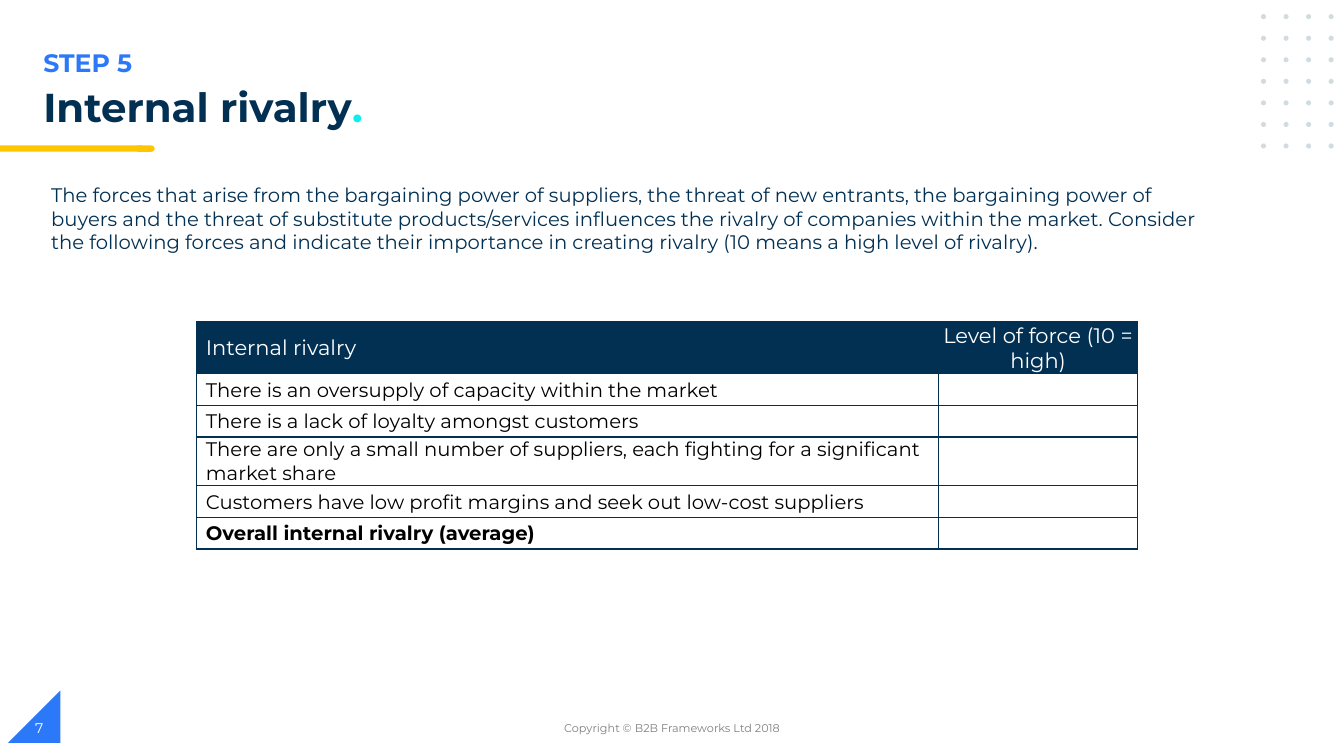
"""Build the Step 5 slide on internal rivalry."""
from itertools import product

from lxml.etree import SubElement
from pptx import Presentation
from pptx.dml.color import RGBColor
from pptx.enum.shapes import MSO_SHAPE as Shape
from pptx.enum.text import MSO_ANCHOR as Anchor, PP_ALIGN as Align
from pptx.oxml.ns import qn
from pptx.util import Pt

rgb = RGBColor.from_string
NAVY, BLUE, YELLOW, CYAN = "023053", "2B79F8", "FFC600", "0EECEC"
WHITE, BLACK, GREY, DOT = "FFFFFF", "000000", "7F7F7F", "D1DBE0"


def add_text(para, text, size=14, colour=NAVY, bold=False, align=Align.LEFT):
    """Add a formatted span to a paragraph."""
    para.alignment = align
    span = para.add_run()
    span.text = text
    span.font.name = "Montserrat"
    span.font.size = Pt(size)
    span.font.bold = bold
    span.font.color.rgb = rgb(colour)


def add_shape(kind, left, top, width, height, colour):
    """Add a plain filled shape."""
    shape = page.shapes.add_shape(kind, Pt(left), Pt(top), Pt(width), Pt(height))
    shape.shadow.inherit = False
    shape.fill.solid()
    shape.fill.fore_color.rgb = rgb(colour)
    shape.line.fill.background()
    return shape


deck = Presentation()
deck.slide_width, deck.slide_height = Pt(960), Pt(540)
page = deck.slides.add_slide(deck.slide_layouts[6])

corner = add_shape(Shape.RIGHT_TRIANGLE, 5.8, 493.2, 37.4, 37.4, BLUE)
corner.element.spPr.get_or_add_xfrm().set("flipH", "1")
for row, column in product(range(7), range(4)):
    add_shape(Shape.OVAL, 900.7 + 16.1 * column, 10.1 + 15.4 * row, 3.6, 3.6, DOT)
add_shape(Shape.FLOWCHART_TERMINATOR, 96.5, 103.9, 14, 4.5, YELLOW)
add_shape(Shape.RECTANGLE, 0, 103.9, 101.5, 4.5, YELLOW)

intro = (
    "The forces that arise from the bargaining power of suppliers, the threat of new entrants, "
    "the bargaining power of buyers and the threat of substitute products/services influences "
    "the rivalry of companies within the market. Consider the following forces and indicate "
    "their importance in creating rivalry (10 means a high level of rivalry)."
)
footer = "Copyright © B2B Frameworks Ltd 2018"
texts = [
    (23.8, 30.2, 481.7, 29, Anchor.TOP, 1,
     [("STEP 5", dict(size=18, colour=BLUE, bold=True))]),
    (23.8, 59, 650, 40.3, Anchor.TOP, 0.9,
     [("Internal rivalry", dict(size=28.8, bold=True)),
      (".", dict(size=28.8, colour=CYAN, bold=True))]),
    (29.5, 127.4, 851.8, 58.3, Anchor.TOP, 1, [(intro, {})]),
    (318.2, 505.4, 324, 28.8, Anchor.MIDDLE, 1,
     [(footer, dict(size=8, colour=GREY, align=Align.CENTER))]),
    (18, 505.4, 216, 28.8, Anchor.MIDDLE, 1, [("7", dict(size=10, colour=WHITE))]),
]
for left, top, width, height, anchor, spacing, spans in texts:
    box = page.shapes.add_textbox(Pt(left), Pt(top), Pt(width), Pt(height))
    frame = box.text_frame
    frame.word_wrap = True
    frame.vertical_anchor = anchor
    para = frame.paragraphs[0]
    para.line_spacing = spacing
    for text, style in spans:
        add_text(para, text, **style)

rows = [
    ("Internal rivalry", 37.3),
    ("There is an oversupply of capacity within the market", 22.6),
    ("There is a lack of loyalty amongst customers", 22.6),
    ("There are only a small number of suppliers, each fighting for a significant market share", 34.8),
    ("Customers have low profit margins and seek out low-cost suppliers", 22.6),
    ("Overall internal rivalry (average)", 22.6),
]
widths = [530, 141.8]
total_height = sum(height for _, height in rows)
table = page.shapes.add_table(
    len(rows), len(widths), Pt(140.6), Pt(229.7), Pt(sum(widths)), Pt(total_height)
).table
table.first_row = table.horz_banding = False
for column, width in zip(table.columns, widths):
    column.width = Pt(width)

for index, (label, height) in enumerate(rows):
    table.rows[index].height = Pt(height)
    label_cell, force_cell = table.rows[index].cells
    for cell in (label_cell, force_cell):
        cell.margin_left = cell.margin_right = cell.margin_top = Pt(0.7)
        cell.margin_bottom = 0
        cell.vertical_anchor = Anchor.MIDDLE
        properties = cell._tc.get_or_add_tcPr()
        for side in ("lnL", "lnR", "lnT", "lnB"):
            border = SubElement(properties, qn(f"a:{side}"), w=str(Pt(1)))
            fill = SubElement(border, qn("a:solidFill"))
            SubElement(fill, qn("a:srgbClr"), val=NAVY)
        if index == 0:
            cell.fill.solid()
            cell.fill.fore_color.rgb = rgb(NAVY)
        else:
            cell.fill.background()
    label_cell.margin_left = Pt(6.5)
    add_text(
        label_cell.text_frame.paragraphs[0], label,
        size=15 if index == 0 else 14,
        colour=WHITE if index == 0 else BLACK,
        bold=index == len(rows) - 1,
    )

force_header = table.cell(0, 1)
force_header.vertical_anchor = Anchor.BOTTOM
add_text(
    force_header.text_frame.paragraphs[0], "Level of force (10 = high)",
    size=15, colour=WHITE, align=Align.CENTER,
)

deck.save("out.pptx")
